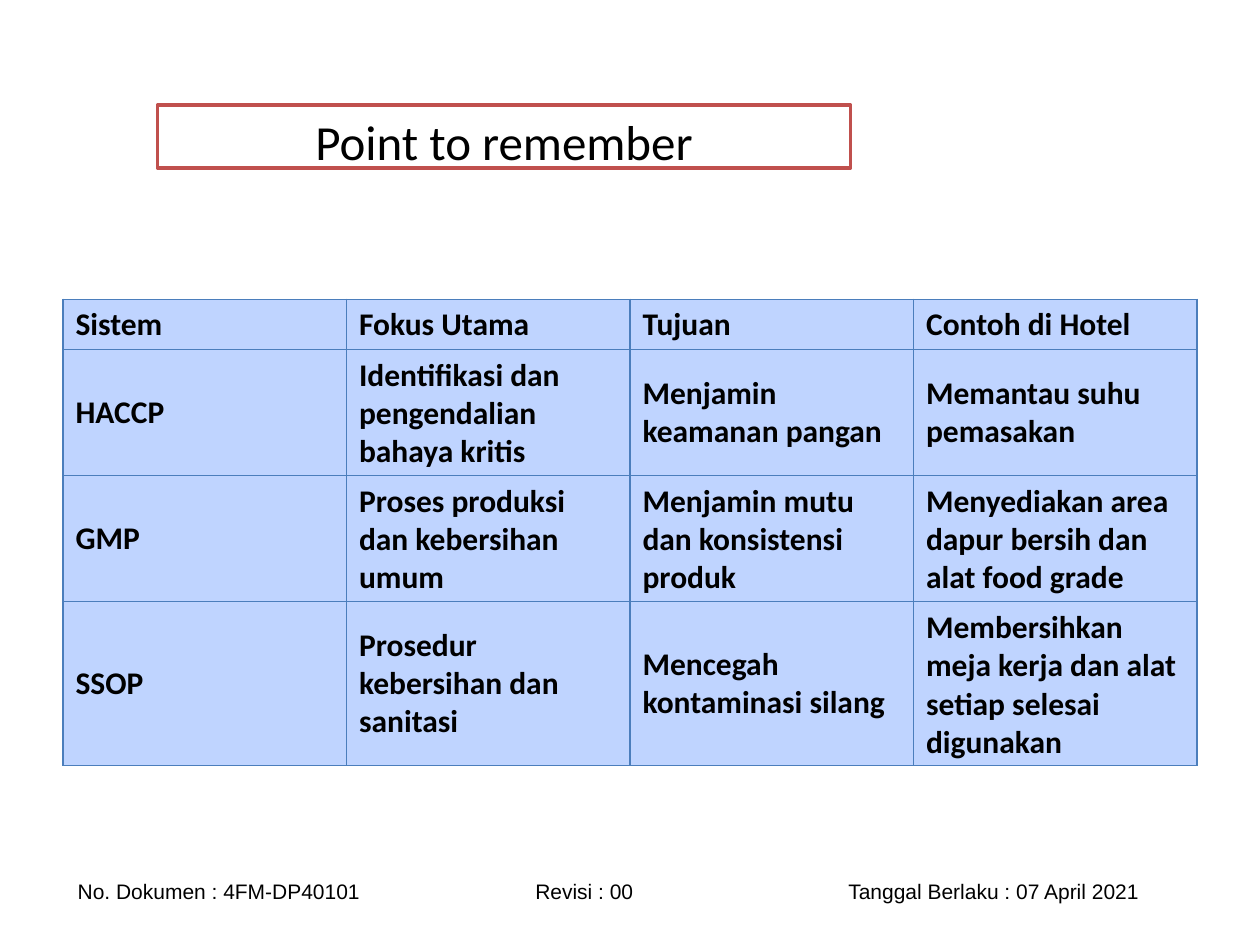
from pptx import Presentation
from pptx.dml.color import RGBColor
from pptx.enum.text import MSO_ANCHOR as Anchor, MSO_AUTO_SIZE as AutoSize, PP_ALIGN as Align
from pptx.oxml import parse_xml
from pptx.oxml.ns import nsdecls
from pptx.util import Pt

BLACK = RGBColor(0x00, 0x00, 0x00)
WHITE = RGBColor(0xFF, 0xFF, 0xFF)
RED = RGBColor(0xC0, 0x50, 0x4D)
PALE_BLUE = RGBColor(0xBF, 0xD4, 0xFF)
BORDER_BLUE = RGBColor(0x4B, 0x7E, 0xBC)

SYSTEMS = [
    ("Sistem", "Fokus Utama", "Tujuan", "Contoh di Hotel"),
    ("HACCP", "Identifikasi dan pengendalian bahaya kritis",
     "Menjamin keamanan pangan", "Memantau suhu pemasakan"),
    ("GMP", "Proses produksi dan kebersihan umum",
     "Menjamin mutu dan konsistensi produk",
     "Menyediakan area dapur bersih dan alat food grade"),
    ("SSOP", "Prosedur kebersihan dan sanitasi",
     "Mencegah kontaminasi silang",
     "Membersihkan meja kerja dan alat setiap selesai digunakan"),
]
ROW_HEIGHTS = [28.8, 72, 72, 93.6]


def write(frame, text, size, font="Calibri", bold=False, align=Align.LEFT, tabs=()):
    """Fill the first paragraph; tabs holds (position, alignment) pairs."""
    frame.word_wrap = True
    para = frame.paragraphs[0]
    para.alignment = align
    para.space_before = Pt(0)
    if tabs:
        stops = "".join(f'<a:tab pos="{Pt(place)}" algn="{kind}"/>' for place, kind in tabs)
        para._p.get_or_add_pPr().append(
            parse_xml(f'<a:tabLst {nsdecls("a")}>{stops}</a:tabLst>'))
    span = para.add_run()
    span.text = text
    span.font.name = font
    span.font.size = Pt(size)
    span.font.bold = bold
    span.font.color.rgb = BLACK


def set_borders(cell, color, width):
    properties = cell._tc.get_or_add_tcPr()
    for index, side in enumerate(("lnL", "lnR", "lnT", "lnB")):
        properties.insert(index, parse_xml(
            f'<a:{side} {nsdecls("a")} w="{Pt(width)}"><a:solidFill>'
            f'<a:srgbClr val="{color}"/></a:solidFill></a:{side}>'))


class SlideBuilder:
    def __init__(self, deck):
        self.page = deck.slides.add_slide(deck.slide_layouts[5])

    def title(self, text, left, top, width, height):
        box = self.page.shapes.title
        box.left, box.top, box.width, box.height = map(Pt, (left, top, width, height))
        box.fill.solid()
        box.fill.fore_color.rgb = WHITE
        box.line.color.rgb = RED
        box.line.width = Pt(2)
        frame = box.text_frame
        frame.auto_size = AutoSize.NONE
        frame.vertical_anchor = Anchor.TOP
        write(frame, text, 28, align=Align.CENTER)

    def table(self, rows, heights, left, top, width):
        shape = self.page.shapes.add_table(
            len(rows), len(rows[0]), Pt(left), Pt(top), Pt(width), Pt(sum(heights)))
        grid = shape.table
        for row, height, texts in zip(grid.rows, heights, rows):
            row.height = Pt(height)
            for cell, text in zip(row.cells, texts):
                cell.fill.solid()
                cell.fill.fore_color.rgb = PALE_BLUE
                cell.vertical_anchor = Anchor.MIDDLE
                set_borders(cell, BORDER_BLUE, 0.75)
                write(cell.text_frame, text, 18, bold=True)

    def footer(self, parts, tabs, left, top, width, height):
        box = self.page.shapes.add_textbox(Pt(left), Pt(top), Pt(width), Pt(height))
        frame = box.text_frame
        frame.margin_left = Pt(30)
        frame.vertical_anchor = Anchor.MIDDLE
        write(frame, "\t".join(parts), 12, font="Arial", tabs=tabs)


def main():
    deck = Presentation()
    deck.slide_width, deck.slide_height = Pt(720), Pt(540)
    slide = SlideBuilder(deck)
    slide.footer(
        ("No. Dokumen : 4FM-DP40101", "Revisi : 00", "Tanggal Berlaku : 07 April 2021"),
        ((289.5, "ctr"), (606.5, "r")), 14.4, 498.5, 680.4, 21.6)
    slide.table(SYSTEMS, ROW_HEIGHTS, 36, 171, 648)
    slide.title("Point to remember", 90, 60, 396, 36)
    deck.save("out.pptx")


if __name__ == "__main__":
    main()
